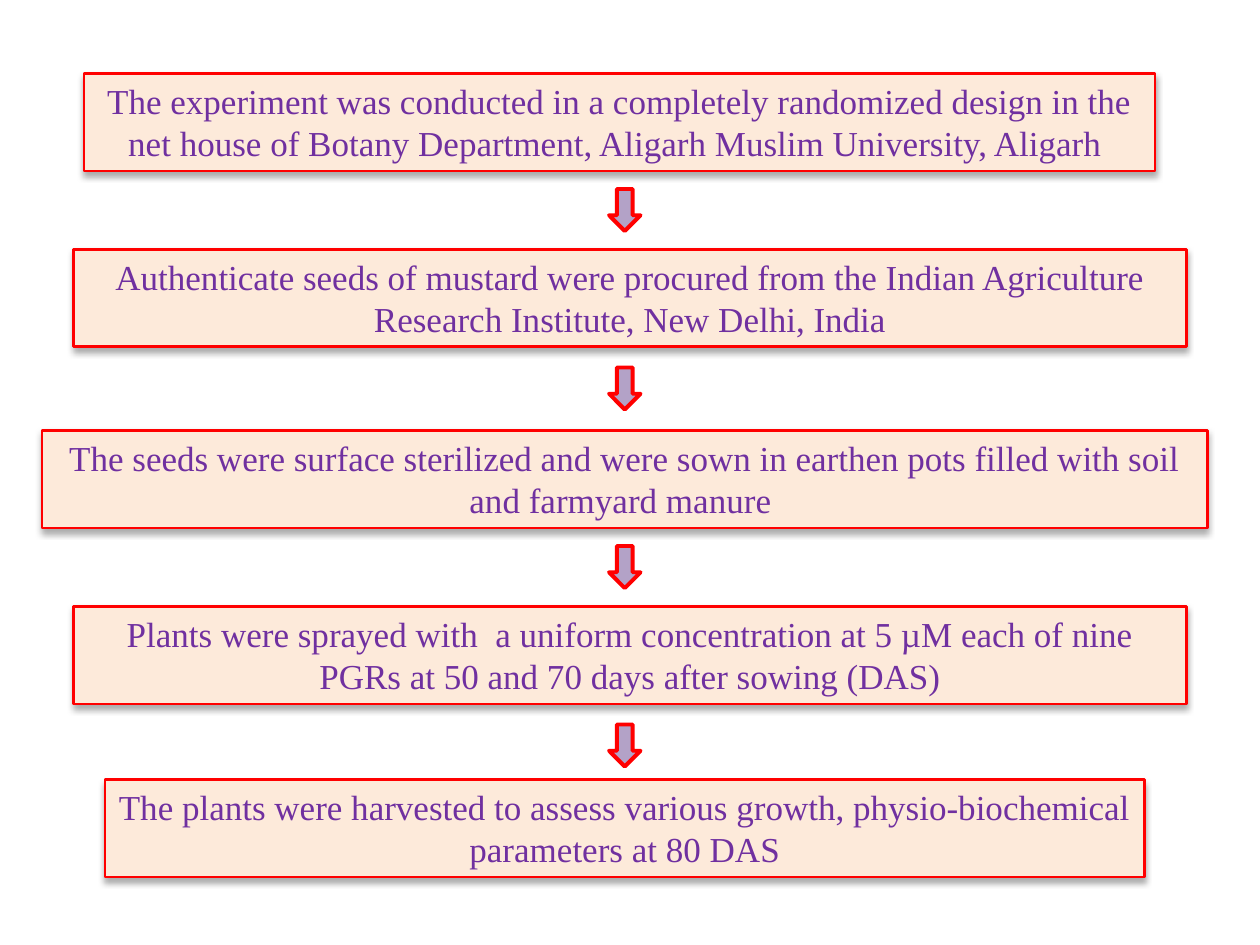
from lxml.etree import SubElement
from pptx import Presentation
from pptx.dml.color import RGBColor
from pptx.enum.shapes import MSO_SHAPE as Shape
from pptx.enum.text import MSO_ANCHOR as Anchor, MSO_AUTO_SIZE as AutoSize, PP_ALIGN as Align
from pptx.oxml.ns import qn
from pptx.util import Pt


def color(hex_value):
    return RGBColor.from_string(hex_value)


class FlowSlide:
    font, size, ink = "Times New Roman", 20, "7030A0"
    box_fill, arrow_fill, outline = "FDEADA", "B3A2C7", "FF0000"
    box_height = 55.7

    def __init__(self, s):
        self.s = s

    def shape(self, kind, x, y, w, h, fill, line_width):
        sp = self.s.shapes.add_shape(kind, Pt(x), Pt(y), Pt(w), Pt(h))
        sp.shadow.inherit = False
        sp.fill.solid()
        sp.fill.fore_color.rgb = color(fill)
        sp.line.color.rgb = color(self.outline)
        sp.line.width = Pt(line_width)
        return sp

    def add_shadow(self, sp):
        effects = sp._element.spPr.find(qn("a:effectLst"))
        shadow = SubElement(effects, qn("a:outerShdw"), blurRad=str(Pt(3.5)),
                            dist=str(Pt(2.2)), dir="5400000", rotWithShape="0")
        black = SubElement(shadow, qn("a:srgbClr"), val="000000")
        SubElement(black, qn("a:alpha"), val="32000")

    def step(self, x, y, w, text):
        sp = self.shape(Shape.RECTANGLE, x, y, w, self.box_height, self.box_fill, 1.5)
        self.add_shadow(sp)
        tf = sp.text_frame
        tf.word_wrap = True
        tf.auto_size = AutoSize.SHAPE_TO_FIT_TEXT
        tf.vertical_anchor = Anchor.TOP
        tf.text = text
        p = tf.paragraphs[0]
        p.alignment = Align.CENTER
        font = p.runs[0].font
        font.name, font.size = self.font, Pt(self.size)
        font.color.rgb = color(self.ink)

    def arrow(self, x, y):
        self.shape(Shape.DOWN_ARROW, x, y, 18, 24, self.arrow_fill, 2.25)


STEPS = [
    (48, 42, 612, "The experiment was conducted in a completely randomized design in the "
                  "net house of Botany Department, Aligarh Muslim University, Aligarh "),
    (42, 142.5, 636, "Authenticate seeds of mustard were procured from the Indian Agriculture "
                     "Research Institute, New Delhi, India"),
    (24, 246, 666, "The seeds were surface sterilized and were sown in earthen pots filled "
                   "with soil and farmyard manure "),
    (42, 346.5, 636, "Plants were sprayed with  a uniform concentration at 5 µM each of nine "
                     "PGRs at 50 and 70 days after sowing (DAS)"),
    (60, 445.5, 594, "The plants were harvested to assess various growth, physio-biochemical "
                     "parameters at 80 DAS"),
]


def main():
    prs = Presentation()
    prs.slide_width, prs.slide_height = Pt(720), Pt(540)
    flow = FlowSlide(prs.slides.add_slide(prs.slide_layouts[6]))
    for step in STEPS:
        flow.step(*step)
    for i in range(len(STEPS) - 1):
        flow.arrow(348, 108 + 102 * i)
    prs.save("out.pptx")


if __name__ == "__main__":
    main()
